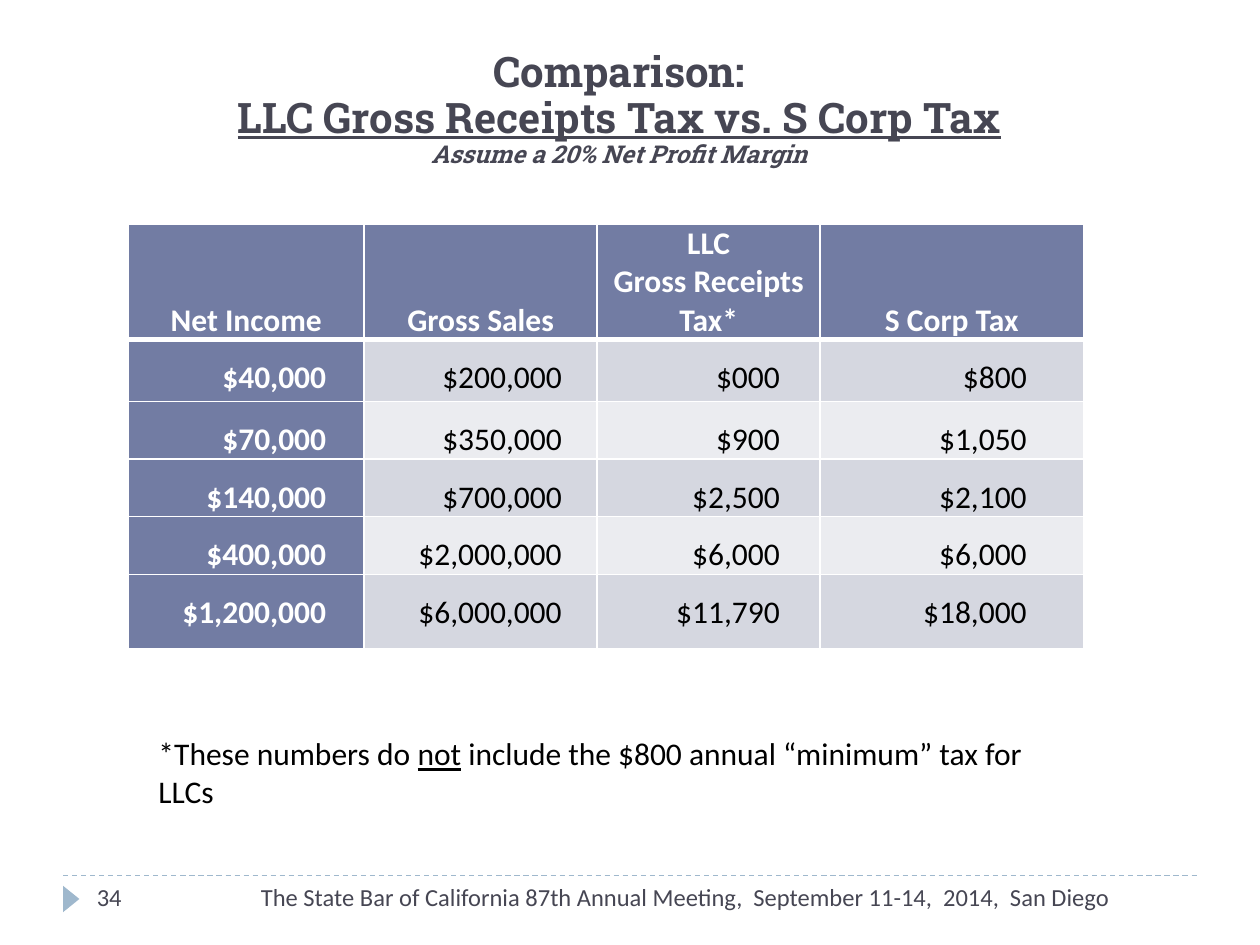
"""Build a slide comparing LLC gross receipts tax with S corp tax."""
from dataclasses import dataclass

from lxml import etree
from pptx import Presentation
from pptx import util as u
from pptx.dml.color import RGBColor
from pptx.enum import dml, shapes, text
from pptx.oxml import ns

Inches, Pt = u.Inches, u.Pt


@dataclass(frozen=True)
class Theme:
    ink: str = "464653"
    black: str = "000000"
    white: str = "FFFFFF"
    accent: str = "9FB8CD"
    header: str = "727CA3"
    bands: tuple = ("D5D7E0", "EBECF0")
    heading: str = "Roboto Slab"
    body: str = "Calibri"
    title: int = 24
    table: int = 18
    small: int = 14


T = Theme()


def add_run(p, words, color, **fmt):
    r = p.add_run()
    r.text = words
    r.font.color.rgb = RGBColor.from_string(color)
    for name, value in fmt.items():
        setattr(r.font, name, value)


def add_xml(parent, tag, **attrs):
    return etree.SubElement(parent, ns.qn(tag), attrs)


prs = Presentation()
prs.slide_width, prs.slide_height = Inches(10), Inches(7.5)
s = prs.slides.add_slide(prs.slide_layouts[5])

rule = s.shapes.add_connector(
    shapes.MSO_CONNECTOR.STRAIGHT, Inches(0.5), Inches(6.95), Inches(9.5), Inches(6.95))
rule.line.color.rgb = RGBColor.from_string(T.accent)
rule.line.width = Pt(0.75)
rule.line.dash_style = dml.MSO_LINE.DASH
add_xml(rule.line._get_or_add_ln().getparent(), "a:effectLst")

marker = s.shapes.add_shape(
    shapes.MSO_SHAPE.ISOSCELES_TRIANGLE, Inches(0.46), Inches(7.07), Inches(0.21), Inches(0.13))
marker.rotation = 90
marker.shadow.inherit = False
marker.fill.solid()
marker.fill.fore_color.rgb = RGBColor.from_string(T.accent)
marker.line.fill.background()

title = s.shapes.title
title.left, title.top, title.width, title.height = map(Inches, (0.51, 0.33, 8.81, 1.08))
tf = title.text_frame
for name, value in {"word_wrap": True, "auto_size": text.MSO_AUTO_SIZE.NONE,
                    "vertical_anchor": text.MSO_ANCHOR.TOP, "margin_top": Inches(0.08)}.items():
    setattr(tf, name, value)
title_lines = [
    ("Comparison:", {"size": Pt(T.title)}),
    ("LLC Gross Receipts Tax vs. S Corp Tax", {"size": Pt(T.title), "underline": True}),
    ("Assume a 20% Net Profit Margin", {"size": Pt(T.small), "italic": True}),
]
for i, (words, fmt) in enumerate(title_lines):
    p = tf.add_paragraph() if i else tf.paragraphs[0]
    p.alignment = text.PP_ALIGN.CENTER
    p.line_spacing = 0.9
    p.space_before = Pt(0)
    add_run(p, words, T.ink, name=T.heading, bold=True, **fmt)

headers = ["Net Income", "Gross Sales", "LLC\nGross Receipts Tax*", "S Corp Tax"]
rows = [
    ["$40,000", "$200,000", "$000", "$800"],
    ["$70,000", "$350,000", "$900", "$1,050"],
    ["$140,000", "$700,000", "$2,500", "$2,100"],
    ["$400,000", "$2,000,000", "$6,000", "$6,000"],
    ["$1,200,000", "$6,000,000", "$11,790", "$18,000"],
]
widths = [1.87, 1.85, 1.77, 2.09]
heights = [0.91, 0.49, 0.45, 0.45, 0.45, 0.59]
tabs = [1.5, 1.5, 1.38, 1.57]

table = s.shapes.add_table(len(heights), len(widths), Inches(1.02), Inches(1.78),
                           Inches(sum(widths)), Inches(sum(heights))).table
for column, width in zip(table.columns, widths):
    column.width = Inches(width)
for row, height in zip(table.rows, heights):
    row.height = Inches(height)

for i, values in enumerate([headers] + rows):
    for j, value in enumerate(values):
        cell = table.cell(i, j)
        strong = i == 0 or j == 0
        for name, size in {"left": 0.07, "right": 0.07, "top": 0, "bottom": 0}.items():
            setattr(cell, f"margin_{name}", Inches(size))
        cell.vertical_anchor = text.MSO_ANCHOR.TOP if i else text.MSO_ANCHOR.BOTTOM
        for side in "LRTB":
            thick = (i, side) in ((0, "B"), (1, "T"))
            ln = add_xml(cell._tc.get_or_add_tcPr(), f"a:ln{side}", w=str(Pt(3 if thick else 1)))
            add_xml(add_xml(ln, "a:solidFill"), "a:srgbClr", val=T.white)
        cell.fill.solid()
        cell.fill.fore_color.rgb = RGBColor.from_string(T.header if strong else T.bands[(i - 1) % 2])
        tf = cell.text_frame
        for k, words in enumerate(value.split("\n")):
            p = tf.add_paragraph() if k else tf.paragraphs[0]
            if i:
                p.line_spacing = 1.5
                p.space_before = p.space_after = Pt(0.2)
                tab_list = add_xml(p._p.get_or_add_pPr(), "a:tabLst")
                add_xml(tab_list, "a:tab", pos=str(Inches(tabs[j])), algn="r")
                words = "\t" + words
            else:
                p.alignment = text.PP_ALIGN.CENTER
            add_run(p, words, T.white if strong else T.black,
                    name=T.body, size=Pt(T.table), bold=strong)

left, right = text.PP_ALIGN.LEFT, text.PP_ALIGN.RIGHT
footer = "The State Bar of California 87th Annual Meeting,  September 11-14,  2014,  San Diego"
note = [("*These numbers do ", False), ("not", True),
        (" include the $800 annual “minimum” tax for LLCs", False)]
boxes = [
    ((1.58, 6.95, 7.33, 0.4), right, T.small, T.ink, [(footer, False)]),
    ((0.67, 6.95, 2.17, 0.4), left, T.small, T.ink, [("34", False)]),
    ((1.16, 5.78, 7.5, 0.71), left, T.table, T.black, note),
]
for place, align, size, color, runs in boxes:
    sp = s.shapes.add_textbox(*map(Inches, place))
    tf = sp.text_frame
    tf.word_wrap = True
    p = tf.paragraphs[0]
    p.alignment = align
    for words, underline in runs:
        add_run(p, words, color, name=T.body, size=Pt(size), underline=underline)

prs.save("out.pptx")
